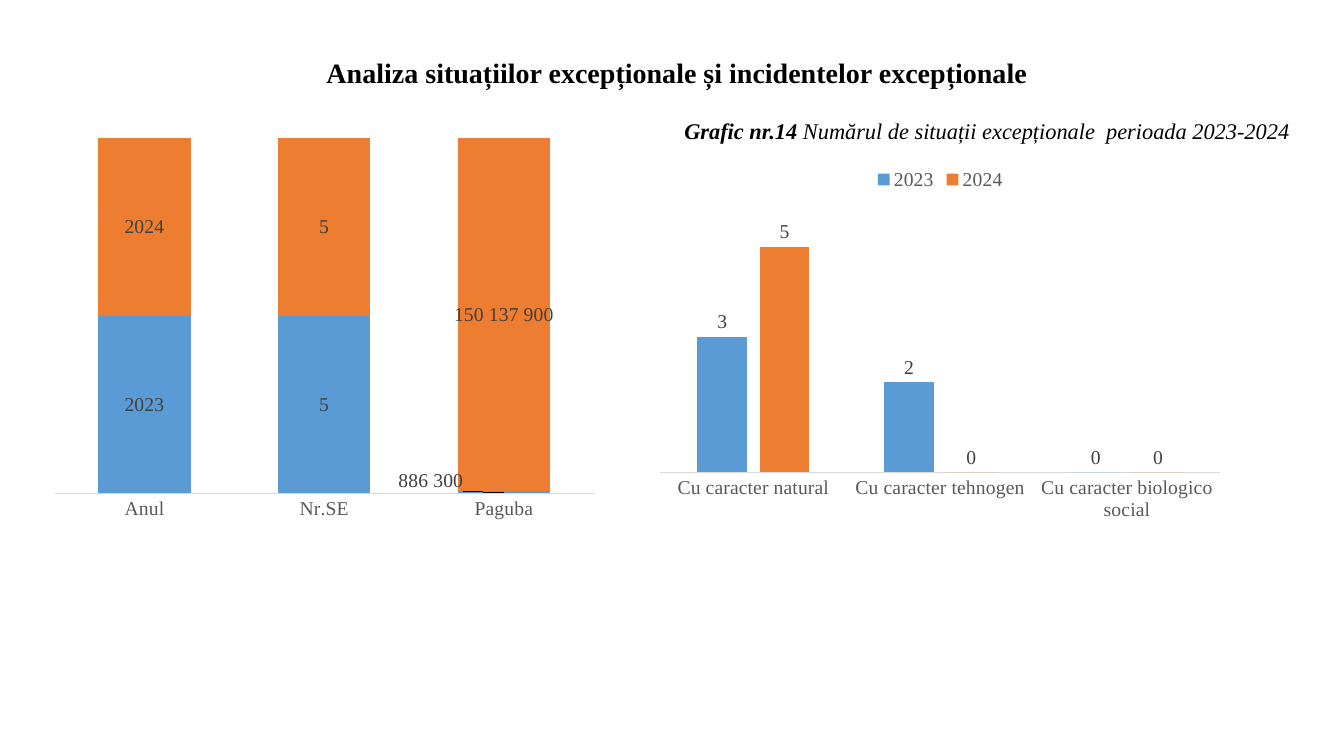
"""Build the slide that analyses exceptional situations in 2023 and 2024."""
from dataclasses import dataclass, field

from pptx import Presentation
from pptx import util as u
from pptx.chart import data as chart_data
from pptx.dml.color import RGBColor
from pptx.enum import chart as charts, text
from pptx.oxml import parse_xml
from pptx.oxml.ns import nsdecls

FONT = "Times New Roman"
BLACK, AXIS_GREY, LABEL_GREY, LINE_GREY = "000000", "595959", "404040", "D9D9D9"
SERIES_COLOURS = ("5B9BD5", "ED7D31")
SLIDE_WIDTH, SLIDE_HEIGHT = u.Inches(13.33), u.Inches(7.5)


@dataclass(frozen=True)
class Box:
    """A place on the slide, in percent of its width and height."""
    left: float
    top: float
    width: float
    height: float

    def lengths(self) -> tuple[int, ...]:
        """Return left, top, width and height as slide lengths."""
        sides = (SLIDE_WIDTH, SLIDE_HEIGHT) * 2
        shares = (self.left, self.top, self.width, self.height)
        return tuple(int(side * share / 100) for side, share in zip(sides, shares))


@dataclass(frozen=True)
class PointLabel:
    """A written value label with its shift in shares of the chart."""
    series: int
    point: int
    wording: str
    shift: dict[str, float] = field(default_factory=dict)


@dataclass(frozen=True)
class ColumnChart:
    """One column chart and its values."""
    box: Box
    kind: charts.XL_CHART_TYPE
    categories: tuple[str, ...]
    series: dict[str, tuple[int, ...]]
    gap: int
    overlap: int
    plot: dict[str, float]
    top_value: float | None = None
    legend: bool = False
    point_labels: tuple[PointLabel, ...] = ()


COLUMN_CHARTS = (
    ColumnChart(
        Box(3.23, 17.2, 41.79, 52.27), charts.XL_CHART_TYPE.COLUMN_STACKED_100,
        ("Anul", "Nr.SE", "Paguba"),
        {"Series 1": (2023, 5, 886300), "Series 2": (2024, 5, 150137900)},
        gap=95, overlap=100, plot={"x": 0.02, "y": 0.02, "w": 0.96, "h": 0.9},
        point_labels=(PointLabel(0, 2, "886 300", {"x": -0.13, "y": -0.03}),
                      PointLabel(1, 2, "150 137 900")),
    ),
    ColumnChart(
        Box(48.24, 20.8, 43.44, 49.07), charts.XL_CHART_TYPE.COLUMN_CLUSTERED,
        ("Cu caracter natural", "Cu caracter tehnogen", "Cu caracter biologico social"),
        {"2023": (3, 2, 0), "2024": (5, 0, 0)},
        gap=150, overlap=-25, plot={"x": 0.02, "y": 0.12, "w": 0.96, "h": 0.73},
        top_value=6, legend=True,
    ),
)


def colour(code: str) -> RGBColor:
    """Turn a hex string into a colour."""
    return RGBColor.from_string(code)


def style(font, size: float, shade: str, bold: bool = False, italic: bool = False) -> None:
    """Format a font."""
    font.name, font.size = FONT, u.Pt(size)
    font.bold, font.italic = bold, italic
    font.color.rgb = colour(shade)


def write(paragraph, wording: str, *, size: float, shade: str = BLACK,
          bold: bool = False, italic: bool = False) -> None:
    """Add one formatted run to a paragraph."""
    run = paragraph.add_run()
    run.text = wording
    style(run.font, size, shade, bold, italic)


def place(shape, box: Box) -> None:
    """Move a shape to its box."""
    shape.left, shape.top, shape.width, shape.height = box.lengths()


def manual_layout(places: dict[str, float], inner: bool = False):
    """Make the layout element of a plot area or a label."""
    modes = ('<c:layoutTarget val="inner"/><c:xMode val="edge"/><c:yMode val="edge"/>'
             if inner else "")
    shares = "".join(f'<c:{side} val="{share}"/>' for side, share in places.items())
    return parse_xml(f'<c:layout {nsdecls("c")}><c:manualLayout>{modes}{shares}'
                     "</c:manualLayout></c:layout>")


def format_axes(chart, top_value: float | None) -> None:
    """Show only the category axis."""
    values, categories = chart.value_axis, chart.category_axis
    values.has_major_gridlines = False
    values.visible = False
    if top_value is not None:
        values.minimum_scale, values.maximum_scale = 0, top_value
    categories.major_tick_mark = charts.XL_TICK_MARK.NONE
    categories.format.line.color.rgb = colour(LINE_GREY)
    categories.format.line.width = u.Pt(0.75)
    style(categories.tick_labels.font, 14, AXIS_GREY)


def draw_chart(slide, columns: ColumnChart) -> None:
    """Draw one column chart."""
    figures = chart_data.CategoryChartData()
    figures.categories = columns.categories
    for name, values in columns.series.items():
        figures.add_series(name, values)
    chart = slide.shapes.add_chart(columns.kind, *columns.box.lengths(), figures).chart
    chart.has_title = False
    style(chart.font, 14, BLACK)
    format_axes(chart, columns.top_value)

    chart.has_legend = columns.legend
    if columns.legend:
        chart.legend.position = charts.XL_LEGEND_POSITION.TOP
        chart.legend.include_in_layout = False
        style(chart.legend.font, 14, AXIS_GREY)

    plot = chart.plots[0]
    plot.gap_width, plot.overlap = columns.gap, columns.overlap
    plot.vary_by_categories = False
    for series, shade in zip(plot.series, SERIES_COLOURS):
        series.format.fill.solid()
        series.format.fill.fore_color.rgb = colour(shade)
        series.data_labels.show_value = True
        style(series.data_labels.font, 14, LABEL_GREY)

    for label in columns.point_labels:
        data_label = plot.series[label.series].points[label.point].data_label
        write(data_label.text_frame.paragraphs[0], label.wording, size=14, shade=LABEL_GREY)
        if label.shift:
            data_label._get_or_add_dLbl().insert(1, manual_layout(label.shift))

    plot_area = chart._chartSpace.chart.plotArea
    for layout in plot_area.xpath("./c:layout"):
        plot_area.remove(layout)
    plot_area.insert(0, manual_layout(columns.plot, inner=True))


def draw_title(slide) -> None:
    """Write the slide title in its placeholder."""
    title = slide.shapes.title
    place(title, Box(1.58, 6.67, 97.6, 7.2))
    frame = title.text_frame
    frame.vertical_anchor = text.MSO_ANCHOR.TOP
    frame.auto_size = text.MSO_AUTO_SIZE.NONE
    frame.paragraphs[0].alignment = text.PP_ALIGN.CENTER
    write(frame.paragraphs[0], "Analiza situațiilor excepționale și incidentelor excepționale",
          size=20, bold=True)


def draw_caption(slide) -> None:
    """Write the caption above the right chart."""
    caption = slide.shapes.add_textbox(*Box(22.5, 14.8, 74.19, 4.93).lengths()).text_frame
    caption.word_wrap = True
    line = caption.paragraphs[0]
    line.alignment = text.PP_ALIGN.RIGHT
    write(line, "Grafic nr.14 ", size=16, bold=True, italic=True)
    write(line, "Numărul de situații excepționale  perioada 2023-2024", size=16, italic=True)


def main() -> None:
    """Build and save the slide."""
    deck = Presentation()
    deck.slide_width, deck.slide_height = SLIDE_WIDTH, SLIDE_HEIGHT
    slide = deck.slides.add_slide(deck.slide_layouts.get_by_name("Title Only"))
    draw_title(slide)
    draw_caption(slide)
    for columns in COLUMN_CHARTS:
        draw_chart(slide, columns)
    deck.save("out.pptx")


if __name__ == "__main__":
    main()
